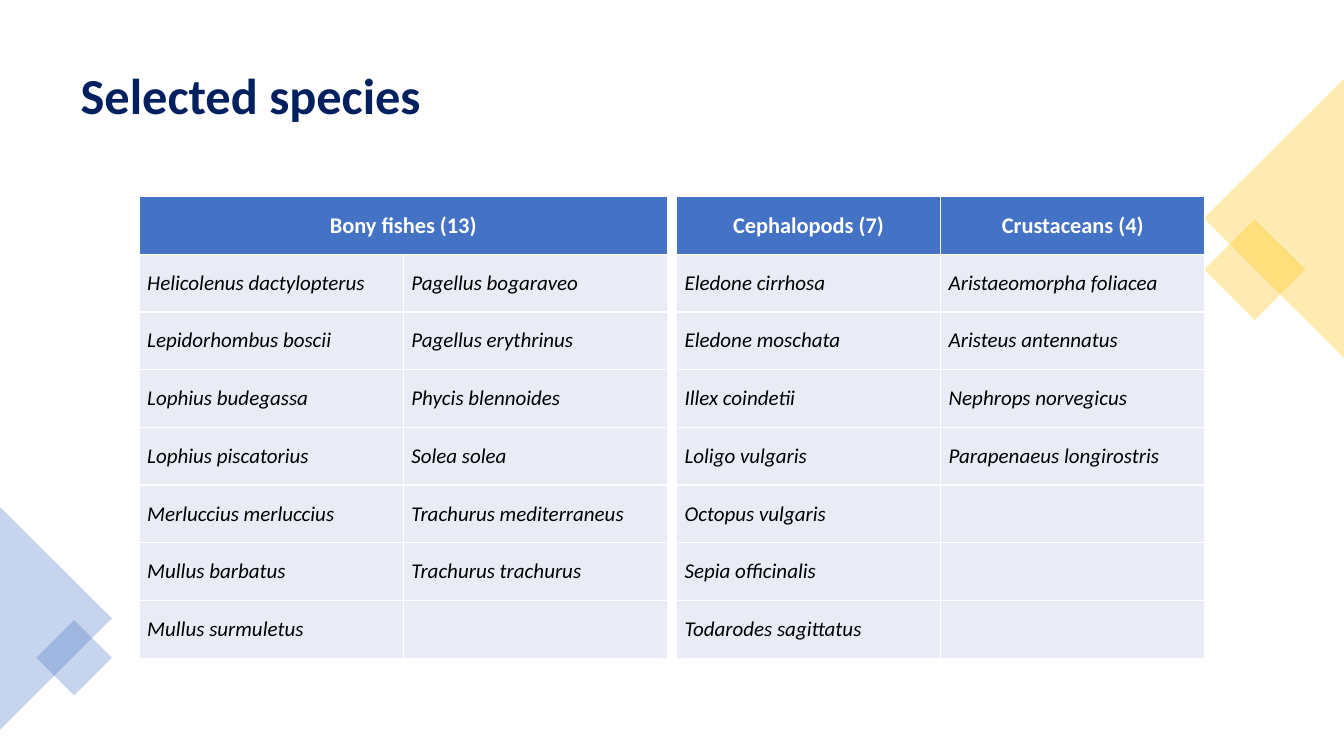
"""Build the slide that lists the selected species in two tables."""
import lxml.etree
import pptx
import pptx.dml.color
import pptx.enum.shapes
import pptx.enum.text
import pptx.oxml.ns
import pptx.util

Inches = pptx.util.Inches
ALIGN = pptx.enum.text.PP_ALIGN
MIDDLE = pptx.enum.text.MSO_ANCHOR.MIDDLE
SHAPE = pptx.enum.shapes.MSO_SHAPE
BLUE, GOLD, PALE = "4472C4", "FFC000", "E9EBF5"


def paint(fill, tone):
    fill.solid()
    fill.fore_color.rgb = pptx.dml.color.RGBColor.from_string(tone)


def write(text, frame, size, tone, bold=False, slant=False, align=ALIGN.LEFT, space=1.0):
    para = frame.paragraphs[0]
    para.alignment = align
    para.line_spacing = space
    run = para.add_run()
    run.text = text
    font = run.font
    font.name = "Calibri"
    font.size = pptx.util.Pt(size)
    font.bold = bold
    font.italic = slant
    paint(font.fill, tone)


deck = pptx.Presentation()
deck.slide_width, deck.slide_height = Inches(13.33), Inches(7.5)
slide = deck.slides.add_slide(deck.slide_layouts[5])

title = slide.shapes.title
title.left, title.top = Inches(0.7), Inches(0.35)
title.width, title.height = Inches(11.93), Inches(1.24)
frame = title.text_frame
frame.word_wrap = True
frame.auto_size = pptx.enum.text.MSO_AUTO_SIZE.NONE
frame.vertical_anchor = MIDDLE
write("Selected species", frame, 36, "002060", bold=True, space=0.9)

decor = [
    (SHAPE.RECTANGLE, 12.09, 2.32, 0.71, 0.71, 45, GOLD),
    (SHAPE.ISOSCELES_TRIANGLE, 11.25, 1.47, 2.77, 1.39, 270, GOLD),
    (SHAPE.ISOSCELES_TRIANGLE, -0.55, 5.58, 2.21, 1.11, 90, BLUE),
    (SHAPE.RECTANGLE, 0.47, 6.26, 0.53, 0.53, 45, BLUE),
]
for kind, left, top, width, height, turn, tone in decor:
    shape = slide.shapes.add_shape(
        kind, Inches(left), Inches(top), Inches(width), Inches(height))
    shape.rotation = turn
    shape.shadow.inherit = False
    shape.line.fill.background()
    paint(shape.fill, tone)
    color = next(shape.element.iter(pptx.oxml.ns.qn("a:srgbClr")))
    lxml.etree.SubElement(color, pptx.oxml.ns.qn("a:alpha"), val="30000")

fishes = [
    ["Helicolenus dactylopterus", "Lepidorhombus boscii", "Lophius budegassa",
     "Lophius piscatorius", "Merluccius merluccius", "Mullus barbatus",
     "Mullus surmuletus"],
    ["Pagellus bogaraveo", "Pagellus erythrinus", "Phycis blennoides",
     "Solea solea", "Trachurus mediterraneus", "Trachurus trachurus"],
]
others = [
    ["Eledone cirrhosa", "Eledone moschata", "Illex coindetii", "Loligo vulgaris",
     "Octopus vulgaris", "Sepia officinalis", "Todarodes sagittatus"],
    ["Aristaeomorpha foliacea", "Aristeus antennatus", "Nephrops norvegicus",
     "Parapenaeus longirostris"],
]
groups = [
    (1.38, ["Bony fishes (13)"], fishes),
    (6.71, ["Cephalopods (7)", "Crustaceans (4)"], others),
]
for left, heads, lists in groups:
    table = slide.shapes.add_table(
        8, 2, Inches(left), Inches(1.95), Inches(5.24), Inches(4.58)).table
    table.horz_banding = False
    for cell in table.iter_cells():
        paint(cell.fill, PALE)
        cell.vertical_anchor = MIDDLE
        cell.margin_left = cell.margin_right = Inches(0.08)
        cell.margin_top = cell.margin_bottom = Inches(0.04)
    for col in range(2):
        paint(table.cell(0, col).fill, BLUE)
    if len(heads) == 1:
        table.cell(0, 0).merge(table.cell(0, 1))
    for col, head in enumerate(heads):
        write(head, table.cell(0, col).text_frame, 16, "FFFFFF",
              bold=True, align=ALIGN.CENTER)
    for col, names in enumerate(lists):
        for row, name in enumerate(names, 1):
            write(name, table.cell(row, col).text_frame, 15, "000000", slant=True)

deck.save("out.pptx")
